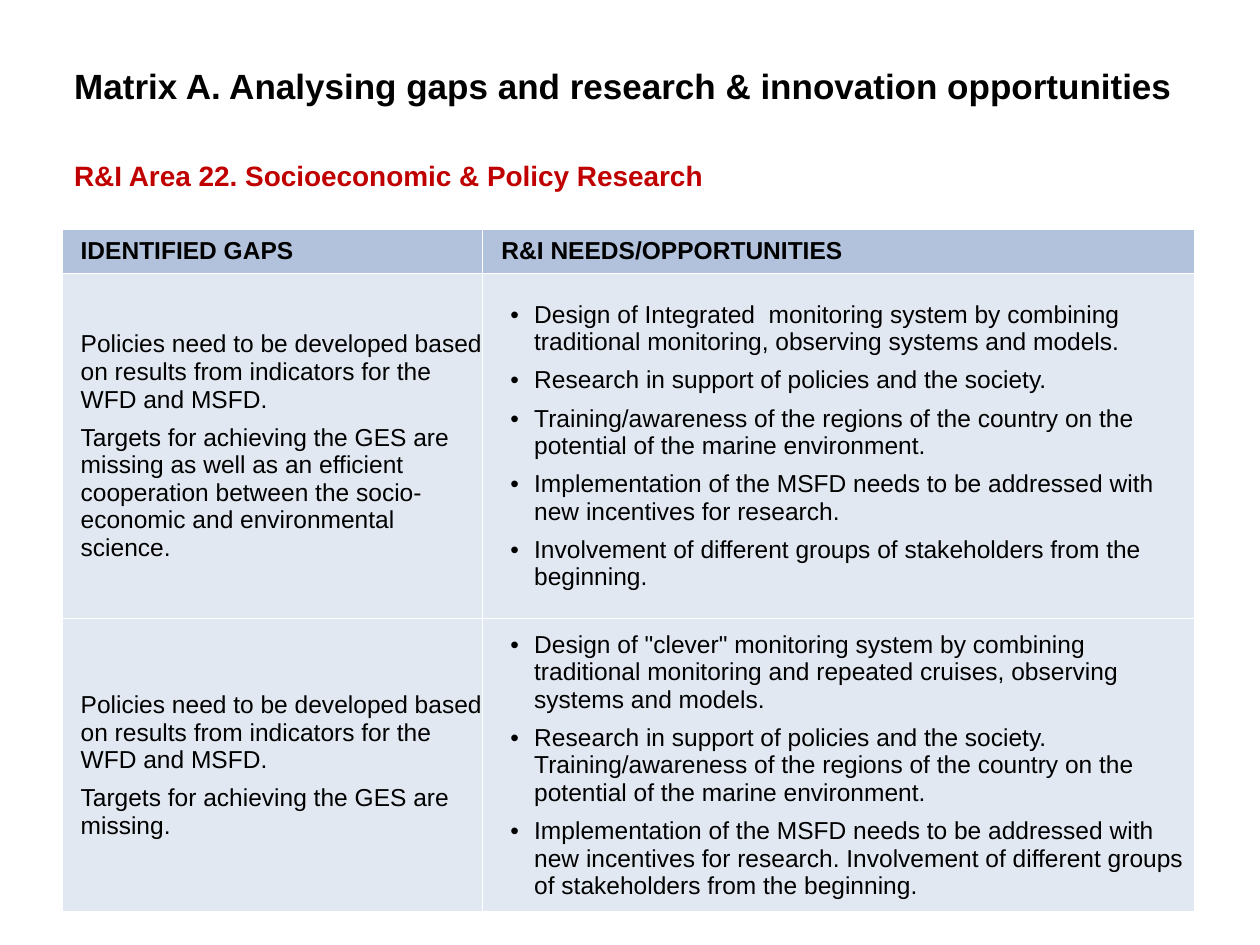
from lxml import etree
from pptx import Presentation, util as u
from pptx.dml.color import RGBColor
from pptx.enum import text
from pptx.oxml.ns import qn

# Content
TITLE = "Matrix A. Analysing gaps and research & innovation opportunities"
AREA = "R&I Area 22. Socioeconomic & Policy Research"
HEADERS = ["IDENTIFIED GAPS", "R&I NEEDS/OPPORTUNITIES"]
POLICY_GAP = ("Policies need to be developed based on results from indicators "
              "for the WFD and MSFD.")
MATRIX = [  # (gaps, needs)
    ([POLICY_GAP,
      "Targets for achieving the GES are missing as well as an efficient "
      "cooperation between the socio-economic and environmental science."],
     ["Design of Integrated  monitoring system by combining  traditional "
      "monitoring, observing systems and models.",
      "Research in support of policies and the society.",
      "Training/awareness of the regions of the country on the potential of "
      "the marine environment.",
      "Implementation of the MSFD needs to be addressed with new incentives "
      "for research.",
      "Involvement of different groups of stakeholders from the beginning."]),
    ([POLICY_GAP,
      "Targets for achieving the GES are missing."],
     ['Design of "clever" monitoring system by combining  traditional '
      "monitoring and repeated cruises, observing systems and models.",
      "Research in support of policies and the society. Training/awareness of "
      "the regions of the country on the potential of the marine environment.",
      "Implementation of the MSFD needs to be addressed with new incentives "
      "for research. Involvement of different groups of stakeholders from the "
      "beginning."]),
]

THEME = dict(font="Arial", ink="000000", accent="C00000", head="B2C1DC",
             body="E1E8F1", border="FFFFFF", title=20, area=16, cell=14)
LEFT, WIDTH = 0.49, 8.99
COLS = [3.34, 5.65]
ROWS = [0.35, 2.74, 2.33]


def add_run(p, words, size, color, bold):
    r = p.add_run()
    r.text = words
    r.font.name = THEME["font"]
    r.font.size = u.Pt(size)
    r.font.bold = bold
    r.font.color.rgb = RGBColor.from_string(color)


def add_label(s, words, top, width, height, size, color, anchor):
    sp = s.shapes.add_textbox(*map(u.Inches, (LEFT, top, width, height)))
    tf = sp.text_frame
    tf.word_wrap = True
    tf.vertical_anchor = anchor
    add_run(tf.paragraphs[0], words, size, color, True)


def set_borders(cell):
    tcPr = cell._tc.get_or_add_tcPr()
    for i, side in enumerate(("lnL", "lnR", "lnT", "lnB")):
        ln = etree.Element(qn("a:" + side), w=str(u.Pt(1)))
        fill = etree.SubElement(ln, qn("a:solidFill"))
        etree.SubElement(fill, qn("a:srgbClr"), val=THEME["border"])
        tcPr.insert(i, ln)


def fill_cell(cell, lines, fill, bold=False, bullets=False):
    cell.fill.solid()
    cell.fill.fore_color.rgb = RGBColor.from_string(fill)
    set_borders(cell)
    cell.vertical_anchor = text.MSO_ANCHOR.MIDDLE
    cell.margin_top = cell.margin_bottom = 0
    cell.margin_left = cell.margin_right = u.Inches(0.07 if bullets else 0)
    tf = cell.text_frame
    for i, line in enumerate(lines):
        p = tf.add_paragraph() if i else tf.paragraphs[0]
        p.space_before = p.space_after = u.Pt(3)
        pPr = p._p.get_or_add_pPr()
        pPr.set("marL", str(u.Inches(0.34 if bullets else 0.15)))
        pPr.set("indent", str(u.Inches(-0.19 if bullets else 0)))
        if bullets:
            etree.SubElement(pPr, qn("a:buFont"), typeface=THEME["font"])
            etree.SubElement(pPr, qn("a:buChar"), char="•")
        add_run(p, line, THEME["cell"], THEME["ink"], bold)


def main():
    prs = Presentation()
    prs.slide_width, prs.slide_height = u.Inches(10), u.Inches(7.5)
    s = prs.slides.add_slide(prs.slide_layouts[6])

    # Headings
    add_label(s, TITLE, 0.38, WIDTH, 0.59, THEME["title"], THEME["ink"],
              text.MSO_ANCHOR.MIDDLE)
    add_label(s, AREA, 1.21, 5.43, 0.37, THEME["area"], THEME["accent"],
              text.MSO_ANCHOR.TOP)

    # Matrix of gaps and needs
    table = s.shapes.add_table(
        len(ROWS), len(COLS), u.Inches(LEFT), u.Inches(1.82),
        u.Inches(WIDTH), u.Inches(sum(ROWS))).table
    table.horz_banding = False
    for col, width in zip(table.columns, COLS):
        col.width = u.Inches(width)
    for row, height in zip(table.rows, ROWS):
        row.height = u.Inches(height)
    for c, header in enumerate(HEADERS):
        fill_cell(table.cell(0, c), [header], THEME["head"], bold=True)
    for r, (gaps, needs) in enumerate(MATRIX, 1):
        fill_cell(table.cell(r, 0), gaps, THEME["body"])
        fill_cell(table.cell(r, 1), needs, THEME["body"], bullets=True)

    prs.save("out.pptx")


if __name__ == "__main__":
    main()
